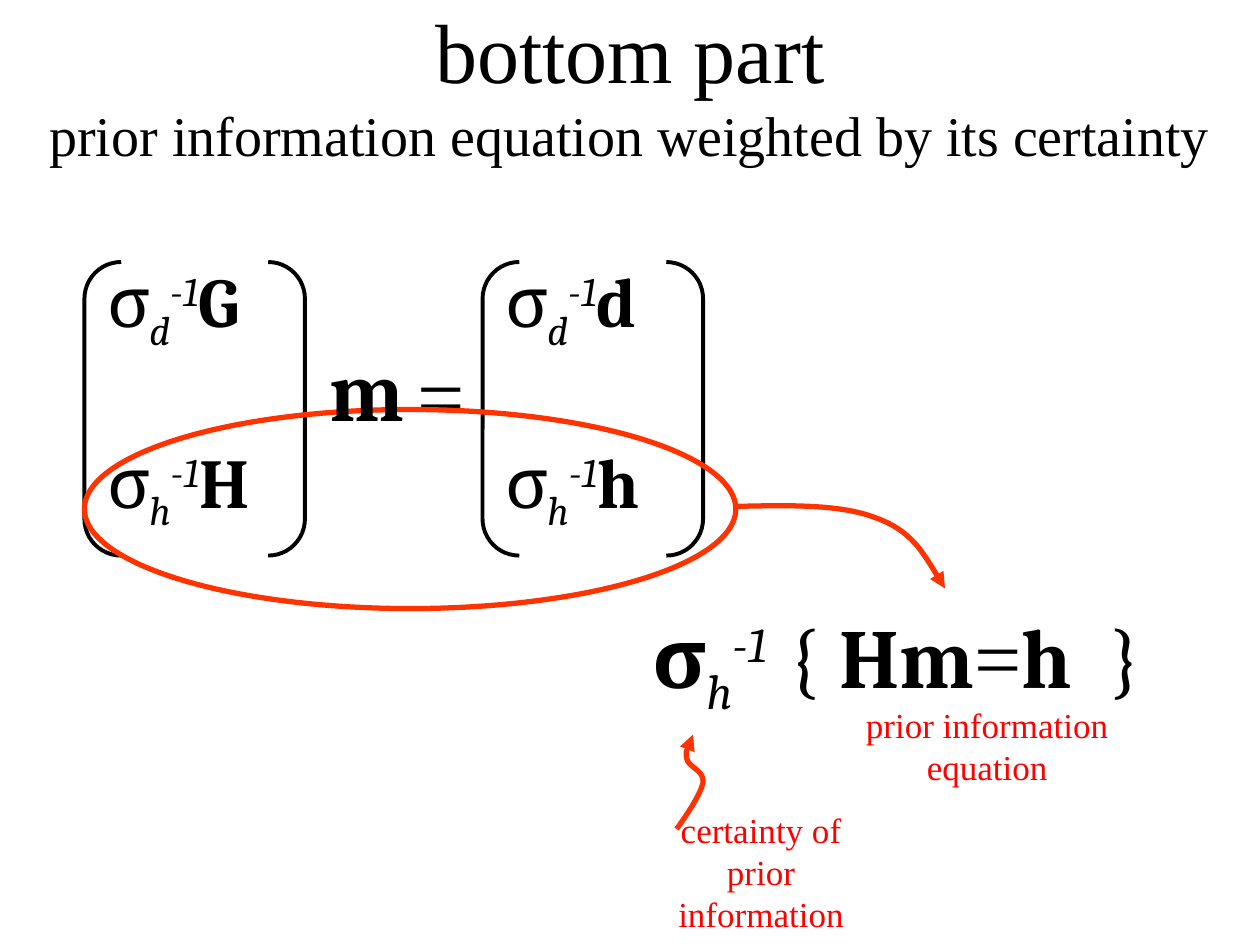
from lxml import etree
from pptx import Presentation
from pptx.dml.color import RGBColor
from pptx.enum import shapes, text
from pptx.oxml.ns import qn
from pptx.util import Inches, Pt

BLACK = RGBColor(0, 0, 0)
WHITE = RGBColor(255, 255, 255)
RED = RGBColor(255, 0, 0)
ORANGE = RGBColor(0xFF, 0x33, 0)
SERIF, MATH = "Times New Roman", "Cambria"
SUB, SUP = -25000, 30000


def format_run(r, size, font=SERIF, color=BLACK, bold=False, italic=False, base=0):
    f = r.font
    f.size, f.name, f.bold, f.italic = Pt(size), font, bold, italic
    f.color.rgb = color
    if base:
        r._r.get_or_add_rPr().set("baseline", str(base))


def add_runs(p, size, parts):
    """Add (text, style) parts to a paragraph; Cambria unless the style says otherwise."""
    for words, style in parts:
        r = p.add_run()
        r.text = words
        format_run(r, size, **{"font": MATH, **style})


def sigma_inverse(index, gap="", bold=False):
    return [("σ", {"bold": bold}),
            (index, {"italic": True, "base": SUB}),
            ("-1" + gap, {"italic": True, "base": SUP})]


def add_label(s, box, size, parts):
    tf = s.shapes.add_textbox(*map(Inches, box)).text_frame
    tf.word_wrap = True
    tf.vertical_anchor = text.MSO_ANCHOR.MIDDLE
    p = tf.paragraphs[0]
    p.alignment = text.PP_ALIGN.CENTER
    add_runs(p, size, parts)


def add_outline(s, kind, box, color, width):
    sp = s.shapes.add_shape(kind, *map(Inches, box))
    sp.shadow.inherit = False
    sp.fill.background()
    sp.line.color.rgb = color
    sp.line.width = Pt(width)


def add_vector(s, left, top_symbol, bottom_symbol):
    """Two weighted entries stacked in a table, with brackets around them."""
    table = s.shapes.add_table(2, 1, Inches(left + 0.08), Inches(2.05),
                               Inches(1.83), Inches(2.87)).table
    rows = [("d", top_symbol), ("h", bottom_symbol)]
    for i, (index, symbol) in enumerate(rows):
        cell = table.cell(i, 0)
        cell.fill.solid()
        cell.fill.fore_color.rgb = WHITE
        add_runs(cell.text_frame.paragraphs[0], 40,
                 sigma_inverse(index) + [(symbol, {"bold": True})])
    add_outline(s, shapes.MSO_SHAPE.DOUBLE_BRACKET, (left, 2.08, 1.75, 2.33), BLACK, 2.25)


def add_curved_arrow(s, points):
    """Bezier curve: a start point, then three points per segment; arrowhead at the last."""
    pts = [(Inches(x), Inches(y)) for x, y in points]
    fb = s.shapes.build_freeform(*pts[0])
    fb.add_line_segments(pts[1:], close=False)
    sp = fb.convert_to_shape()
    sp.shadow.inherit = False
    sp.fill.background()
    sp.line.color.rgb = ORANGE
    sp.line.width = Pt(3)
    lines = list(sp._element.iter(qn("a:lnTo")))
    path = lines[0].getparent()
    for i in range(0, len(lines), 3):
        curve = etree.SubElement(path, qn("a:cubicBezTo"))
        for line in lines[i:i + 3]:
            curve.append(line[0])
            path.remove(line)
    etree.SubElement(sp.line._get_or_add_ln(), qn("a:tailEnd"), type="triangle")


def add_title(s):
    title = s.shapes.title
    title.left, title.top, title.width, title.height = map(Inches, (0, 0, 10, 1.33))
    tf = title.text_frame
    tf.text = "bottom part\vprior information equation weighted by its certainty"
    tf.word_wrap = True
    tf.vertical_anchor = text.MSO_ANCHOR.MIDDLE
    p = tf.paragraphs[0]
    p.alignment = text.PP_ALIGN.CENTER
    for r, size in zip(p.runs, (48, 32)):
        format_run(r, size)


def main():
    prs = Presentation()
    prs.slide_width, prs.slide_height = Inches(10), Inches(7.5)
    s = prs.slides.add_slide(prs.slide_layouts[5])
    add_title(s)

    bold, serif = {"bold": True}, {"font": SERIF}
    note = {"font": SERIF, "color": RED}
    add_label(s, (4.83, 4.25, 4.58, 2), 48,
              sigma_inverse("h", gap="  ", bold=True)
              + [("{ ", {}), ("Hm", bold), ("=", serif), ("h  ", bold), ("}", {})])
    add_label(s, (6.75, 5.58, 2.17, 0.67), 20, [("prior information equation", note)])

    add_vector(s, 0.67, "G", "H")
    add_vector(s, 3.83, "d", "h")
    add_label(s, (3, 1.83, 1, 2.58), 48, [("=", serif)])

    add_outline(s, shapes.MSO_SHAPE.OVAL, (0.67, 3.25, 5.17, 1.58), ORANGE, 3)
    add_label(s, (5, 6.58, 2.08, 0.67), 20, [("certainty of prior information", note)])
    add_curved_arrow(s, [(5.37, 6.58), (5.47, 6.44), (5.56, 6.3), (5.58, 6.21),
                         (5.59, 6.11), (5.46, 6.09), (5.45, 6.02),
                         (5.44, 5.96), (5.47, 5.9), (5.5, 5.83)])
    add_curved_arrow(s, [(5.83, 4.02), (6.25, 4.01), (6.67, 4), (6.95, 4.11),
                         (7.23, 4.21), (7.36, 4.44), (7.5, 4.67)])
    add_label(s, (2.5, 2.79, 0.83, 0.58), 48, [("m", bold)])
    prs.save("out.pptx")


if __name__ == "__main__":
    main()
